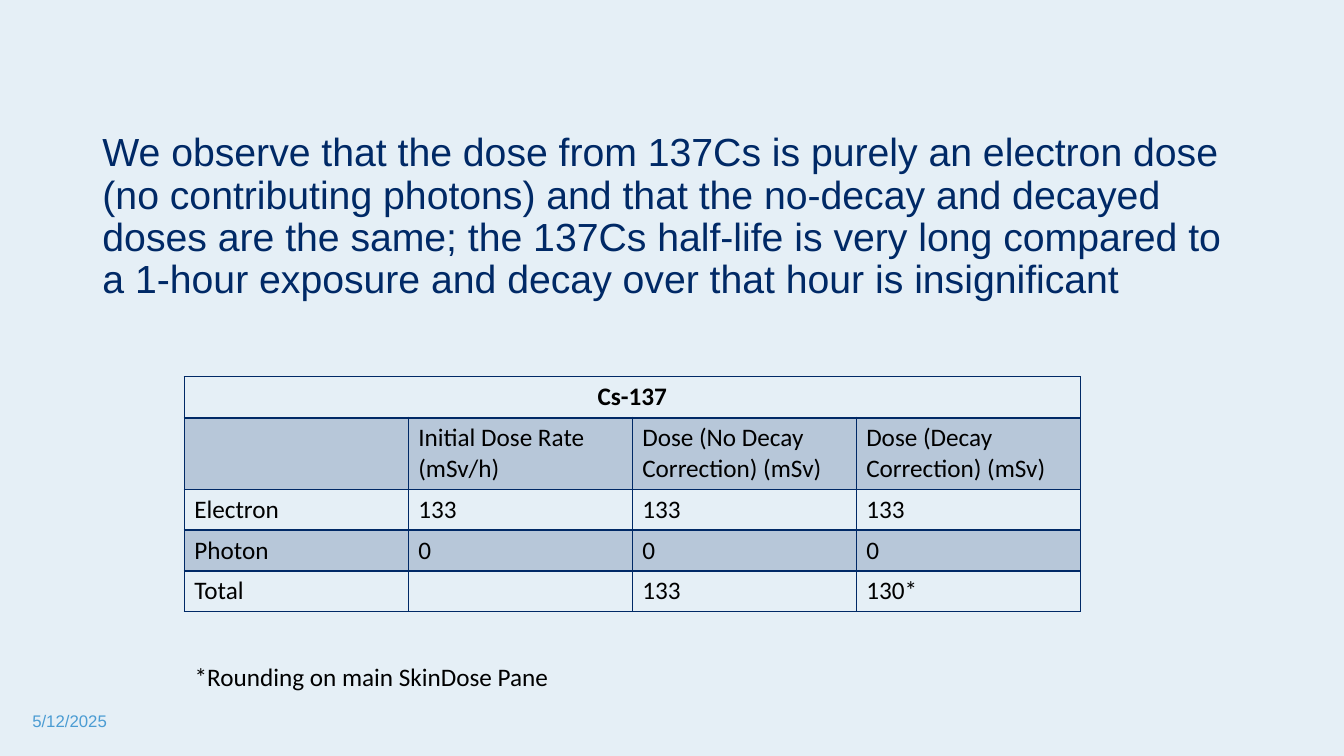
from dataclasses import dataclass

from lxml.etree import SubElement
from pptx import Presentation
from pptx.dml.color import RGBColor
from pptx.enum.text import MSO_ANCHOR, MSO_AUTO_SIZE, PP_ALIGN
from pptx.oxml.ns import qn
from pptx.util import Pt


@dataclass(frozen=True)
class Theme:
    background: str = "E5EFF6"
    navy: str = "002966"
    sky: str = "4B9CD3"
    black: str = "000000"
    statement_size: int = 28
    text_size: int = 18
    date_size: int = 12
    heading_font: str = "Arial"
    text_font: str = "Calibri"


theme = Theme()


def format_text(text_frame, font_name, size, color, bold=False):
    for paragraph in text_frame.paragraphs:
        font = paragraph.font
        font.name, font.size, font.bold = font_name, Pt(size), bold
        font.color.rgb = RGBColor.from_string(color)
        for run in paragraph.runs:
            run.font.name, run.font.size, run.font.bold = font_name, Pt(size), bold
            run.font.color.rgb = RGBColor.from_string(color)


def add_border(cell, side, width):
    """Draw one cell side; call before the cell is filled, as lines come first."""
    line = SubElement(cell._tc.get_or_add_tcPr(), qn(f"a:{side}"), w=str(Pt(width)))
    fill = SubElement(line, qn("a:solidFill"))
    SubElement(fill, qn("a:srgbClr"), val=theme.navy)


presentation = Presentation()
presentation.slide_width, presentation.slide_height = Pt(960), Pt(540)
slide = presentation.slides.add_slide(presentation.slide_layouts[1])
slide.background.fill.solid()
slide.background.fill.fore_color.rgb = RGBColor.from_string(theme.background)
title = slide.shapes.title
title.element.getparent().remove(title.element)

# Statement
statement = slide.placeholders[1]
statement.left, statement.top = Pt(66), Pt(91.4)
statement.width, statement.height = Pt(828), Pt(373.7)
frame = statement.text_frame
frame.text = (
    "We observe that the dose from 137Cs is purely an electron dose "
    "(no contributing photons) and that the no-decay and decayed doses are the same; "
    "the 137Cs half-life is very long compared to a 1-hour exposure "
    "and decay over that hour is insignificant"
)
frame.auto_size = MSO_AUTO_SIZE.NONE
frame.vertical_anchor = MSO_ANCHOR.TOP
paragraph = frame.paragraphs[0]
paragraph.line_spacing = 0.9
paragraph.space_before = Pt(0)
properties = paragraph._p.get_or_add_pPr()
properties.set("marL", "0")
properties.set("indent", "0")
SubElement(properties, qn("a:buNone"))
format_text(frame, theme.heading_font, theme.statement_size, theme.navy)

# Date and footnote
labels = [
    ("5/12/2025", 16, 500.4, 216, MSO_ANCHOR.MIDDLE,
     theme.heading_font, theme.date_size, theme.sky),
    ("*Rounding on main SkinDose Pane", 132, 468.7, 348.5, MSO_ANCHOR.TOP,
     theme.text_font, theme.text_size, theme.black),
]
for text, left, top, width, anchor, font_name, size, color in labels:
    label = slide.shapes.add_textbox(Pt(left), Pt(top), Pt(width), Pt(29))
    label.text_frame.text = text
    label.text_frame.word_wrap = True
    label.text_frame.vertical_anchor = anchor
    format_text(label.text_frame, font_name, size, color)

# Dose table
doses = [
    ["Cs-137", "", "", ""],
    ["", "Initial Dose Rate (mSv/h)", "Dose (No Decay Correction) (mSv)",
     "Dose (Decay Correction) (mSv)"],
    ["Electron", "133", "133", "133"],
    ["Photon", "0", "0", "0"],
    ["Total", "", "133", "130*"],
]
row_heights = [29.2, 51, 29.2, 29.2, 29.2]
table = slide.shapes.add_table(
    len(doses), 4, Pt(131.6), Pt(269.2), Pt(640), Pt(sum(row_heights))
).table
table.first_row = table.horz_banding = False
for row, height in zip(table.rows, row_heights):
    row.height = Pt(height)
table.cell(0, 0).merge(table.cell(0, 3))

for row_index, values in enumerate(doses):
    is_heading = row_index == 0
    for column_index, value in enumerate(values):
        cell = table.cell(row_index, column_index)
        cell.text_frame.text = value
        format_text(cell.text_frame, theme.text_font, theme.text_size,
                    theme.black, bold=is_heading)
        if is_heading:
            cell.text_frame.paragraphs[0].alignment = PP_ALIGN.CENTER
        add_border(cell, "lnL", 1)
        add_border(cell, "lnR", 1)
        add_border(cell, "lnT", 2 if row_index == 1 else 1)
        add_border(cell, "lnB", 2 if is_heading else 1)
        if row_index % 2:
            cell.fill.solid()
            cell.fill.fore_color.rgb = RGBColor.from_string(theme.navy)
            color = cell._tc.tcPr.find(qn("a:solidFill")).find(qn("a:srgbClr"))
            SubElement(color, qn("a:alpha"), val="20000")
        else:
            cell.fill.background()

presentation.save("out.pptx")
